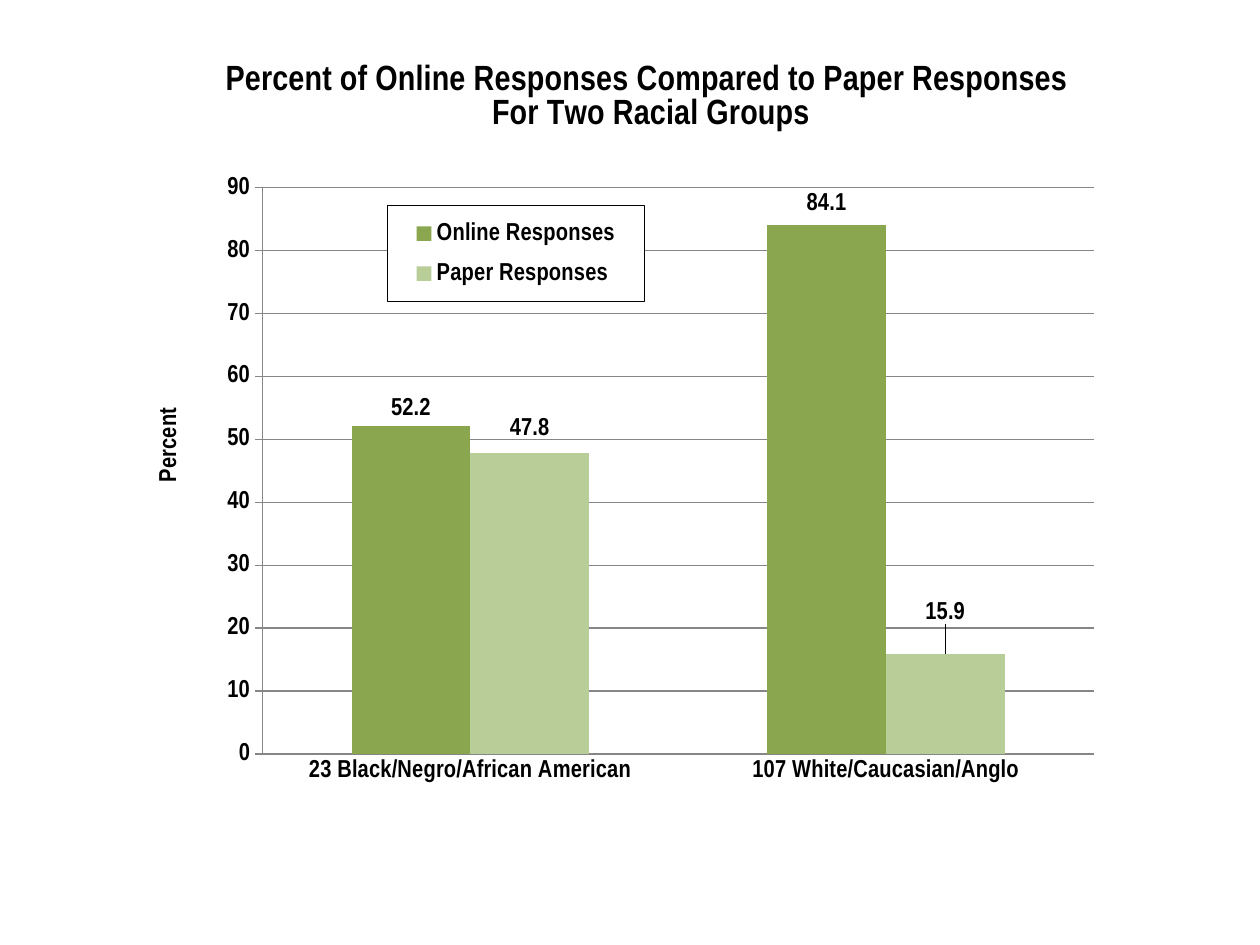
import dataclasses

import pptx
import pptx.chart.data
import pptx.dml.color
import pptx.enum.chart
import pptx.oxml
import pptx.oxml.ns
import pptx.util

Kind = pptx.enum.chart
qn = pptx.oxml.ns.qn


@dataclasses.dataclass
class Theme:
    face: str = "Arial Narrow"
    body: int = 14
    head: int = 20
    ink: str = "000000"
    paper: str = "FFFFFF"
    grid: str = "868686"
    bars: tuple = ("8AA64F", "B9CD99")


def rgb(code):
    return pptx.dml.color.RGBColor.from_string(code)


def parse(tag, body):
    space = pptx.oxml.ns.nsdecls("c", "a")
    return pptx.oxml.parse_xml(f"<c:{tag} {space}>{body}</c:{tag}>")


def place(node, index, x, y, w=None, h=None, inner=False, edge=True):
    """Set a manual layout, in shares of the chart, as child number index."""
    for old in node.findall(qn("c:layout")):
        node.remove(old)
    body = '<c:layoutTarget val="inner"/>' if inner else ""
    if edge:
        body += '<c:xMode val="edge"/><c:yMode val="edge"/>'
    for name, share in zip("xywh", (x, y, w, h)):
        if share is not None:
            body += f'<c:{name} val="{share}"/>'
    node.insert(index, parse("layout", f"<c:manualLayout>{body}</c:manualLayout>"))


class Deck:
    def __init__(self, theme):
        self.theme = theme
        self.file = pptx.Presentation()
        self.file.slide_width = pptx.util.Inches(10)
        self.file.slide_height = pptx.util.Inches(7.5)
        self.slide = self.file.slides.add_slide(self.file.slide_layouts[6])

    def font(self, font, size):
        font.name = self.theme.face
        font.size = pptx.util.Pt(size)
        font.bold = True
        font.color.rgb = rgb(self.theme.ink)

    def chart(self, x, y, w, h, groups, rows):
        """Add a column chart placed by shares of the slide."""
        data = pptx.chart.data.CategoryChartData()
        data.categories = groups
        for name, values in rows.items():
            data.add_series(name, values)
        wide, high = self.file.slide_width, self.file.slide_height
        box = int(x * wide), int(y * high), int(w * wide), int(h * high)
        chart = self.slide.shapes.add_chart(
            Kind.XL_CHART_TYPE.COLUMN_CLUSTERED, *box, data).chart
        self.font(chart.font, self.theme.body)
        plot = chart.plots[0]
        plot.gap_width, plot.overlap = 150, 0
        plot.vary_by_categories = False
        for series, color in zip(plot.series, self.theme.bars):
            series.format.fill.solid()
            series.format.fill.fore_color.rgb = rgb(color)
            labels = series.data_labels
            labels.show_value = True
            labels.position = Kind.XL_LABEL_POSITION.OUTSIDE_END
            self.font(labels.font, self.theme.body)
        place(chart.element.xpath("c:chart/c:plotArea")[0], 0,
              0.176, 0.182, 0.733, 0.705, inner=True)
        return chart

    def title(self, owner, text, size, x, y):
        frame = owner.text_frame
        frame.text = text
        for paragraph in frame.paragraphs:
            self.font(paragraph.font, size)
        place(owner.element, 1, x, y)

    def line(self, part):
        part.format.line.color.rgb = rgb(self.theme.grid)
        part.format.line.width = pptx.util.Pt(0.75)

    def axes(self, chart, text):
        marks = Kind.XL_TICK_MARK
        base, side = chart.category_axis, chart.value_axis
        base.major_tick_mark = marks.NONE
        side.major_tick_mark = marks.CROSS
        side.minimum_scale, side.maximum_scale, side.major_unit = 0, 90, 10
        for part in (base, side, side.major_gridlines):
            self.line(part)
        self.title(side.axis_title, text, self.theme.body, 0.077, 0.45)
        frame = side.axis_title.element.xpath(".//a:bodyPr")[0]
        frame.set("rot", "-5400000")
        frame.set("vert", "horz")

    def legend(self, chart, x, y, w, h):
        chart.has_legend = True
        chart.legend.position = Kind.XL_LEGEND_POSITION.RIGHT
        chart.legend.include_in_layout = False
        node = chart.element.xpath("c:chart/c:legend")[0]
        place(node, 1, x, y, w, h)
        fill = '<a:solidFill><a:srgbClr val="{}"/></a:solidFill>'
        look = fill.format(self.theme.paper)
        look += f'<a:ln w="9525">{fill.format(self.theme.ink)}</a:ln>'
        node.find(qn("c:overlay")).addnext(parse("spPr", look))

    def lift(self, chart, row, group, rise):
        """Raise one data label by a share of the chart's height."""
        series = chart.plots[0].series[row]
        label = series.points[group].data_label
        label.position = Kind.XL_LABEL_POSITION.OUTSIDE_END
        self.font(label.font, self.theme.body)
        node = chart.element.xpath(f".//c:ser[{row + 1}]//c:dLbl[c:idx/@val='{group}']")[0]
        place(node, 1, 0, -rise, edge=False)


def main():
    deck = Deck(Theme())
    chart = deck.chart(
        0.05, 0.044, 0.9, 0.85,
        ["23 Black/Negro/African American", "107 White/Caucasian/Anglo"],
        {"Online Responses": (52.2, 84.1), "Paper Responses": (47.8, 15.9)})
    chart.has_title = True
    deck.title(
        chart.chart_title,
        "Percent of Online Responses Compared to Paper Responses \nFor Two Racial Groups",
        deck.theme.head, 0.14, 0.02)
    deck.axes(chart, "Percent")
    deck.legend(chart, 0.286, 0.204, 0.227, 0.12)
    for row, group, rise in ((0, 1, 0.005), (1, 0, 0.01), (1, 1, 0.03)):
        deck.lift(chart, row, group, rise)
    deck.file.save("out.pptx")


if __name__ == "__main__":
    main()
